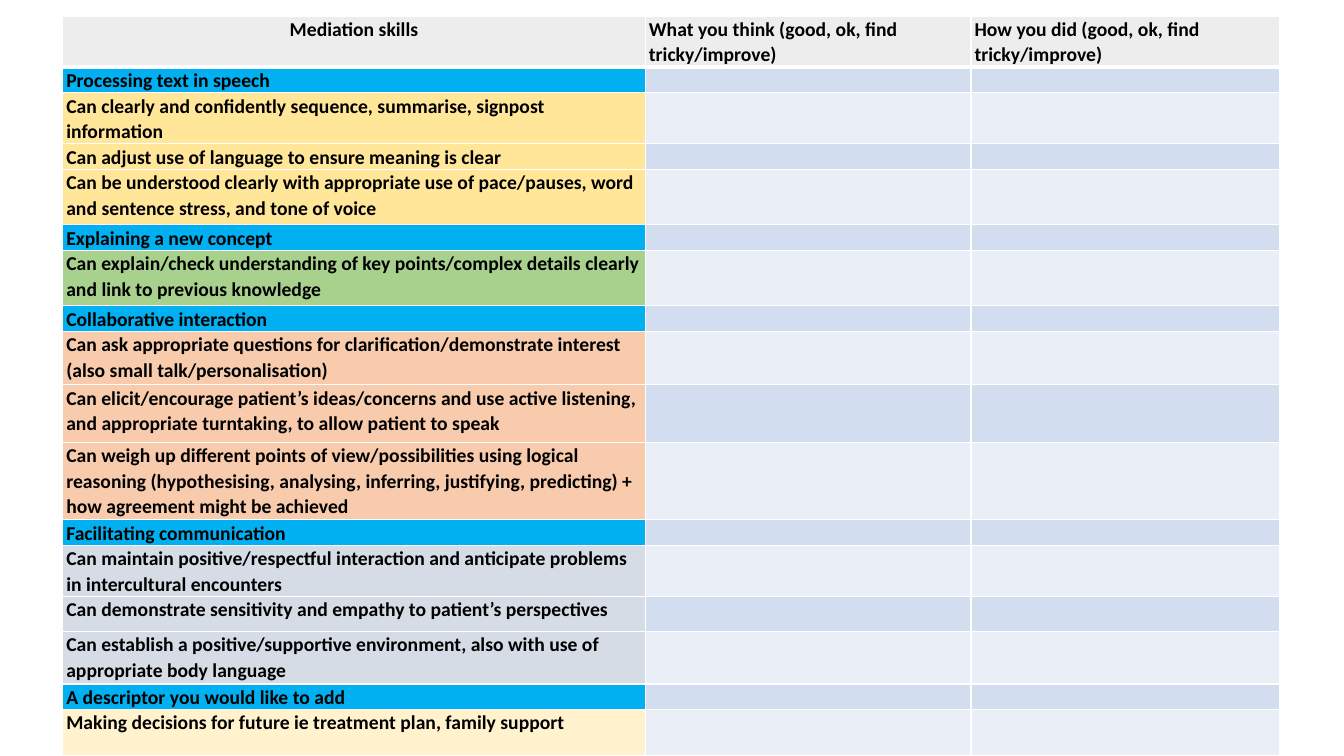
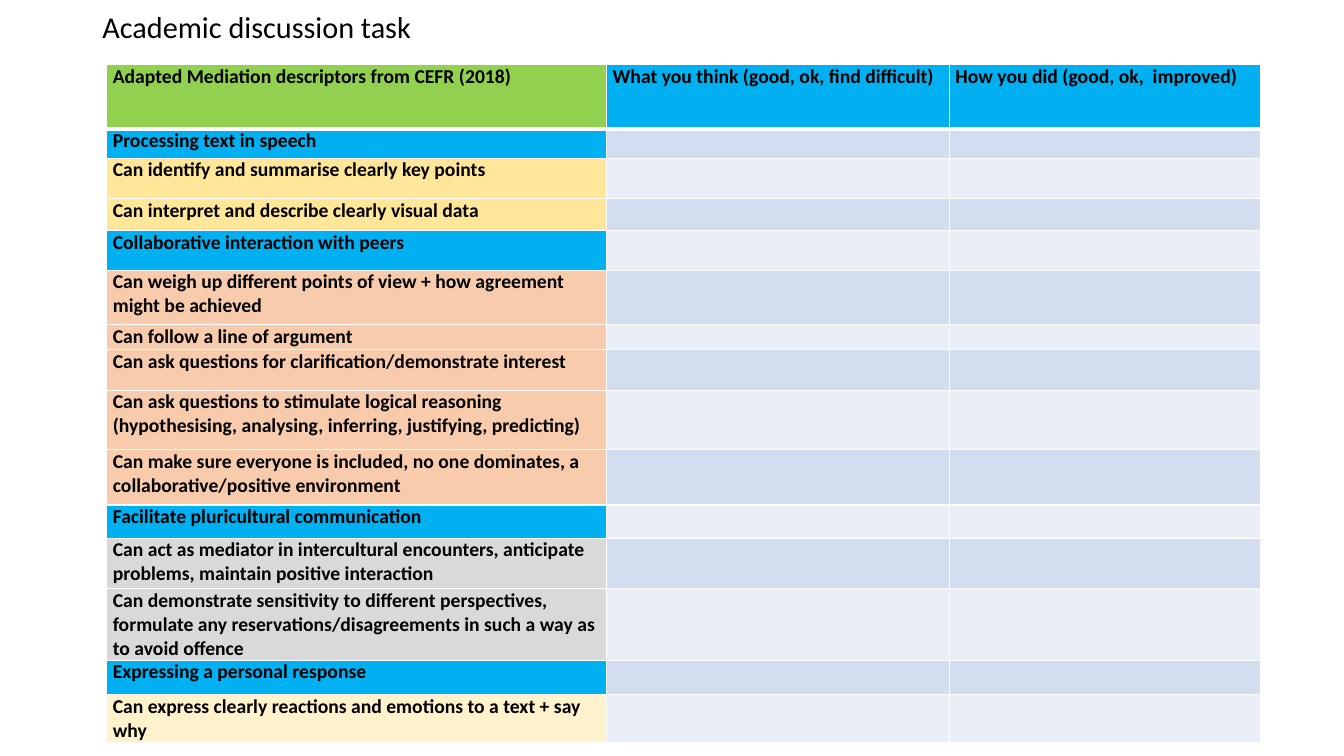
from lxml import etree
from pptx import Presentation
from pptx.dml.color import RGBColor
from pptx.enum.text import MSO_ANCHOR, MSO_AUTO_SIZE, PP_ALIGN
from pptx.oxml.ns import qn
from pptx.util import Pt

MIDDLE = MSO_ANCHOR.MIDDLE
NO_AUTOFIT = MSO_AUTO_SIZE.NONE
LEFT = PP_ALIGN.LEFT
CENTER = PP_ALIGN.CENTER

TITLE_ONLY_LAYOUT = 5
BLANK_LAYOUT = 6
FONT = "Calibri"
TABLE_TEXT_SIZE = 14
TITLE_SIZE = 21.6

BLACK = "000000"
WHITE = "FFFFFF"
HEADING = "00B0F0"
YELLOW = "FFE699"
CREAM = "FFF2CC"
GREEN = "A9D18E"
LIME = "92D050"
PEACH = "F8CBAD"
BLUE_GREY = "D6DCE5"
GREY = "D9D9D9"
PALE_GREY = "EDEDED"
BANDS = ("EAEFF7", "D2DEEF")

SKILLS_HEADER = [
    ("Mediation skills", PALE_GREY),
    ("What you think (good, ok, find tricky/improve)", PALE_GREY),
    ("How you did (good, ok, find tricky/improve)", PALE_GREY),
]
SKILLS_ROWS = [
    ("Processing text in speech", HEADING, 17.3),
    ("Can clearly and confidently sequence, summarise, signpost information", YELLOW, 34.6),
    ("Can adjust use of language to ensure meaning is clear", YELLOW, 17.3),
    ("Can be understood clearly with appropriate use of pace/pauses, word and sentence stress, "
     "and tone of voice", YELLOW, 39.6),
    ("Explaining a new concept", HEADING, 17.3),
    ("Can explain/check understanding of key points/complex details clearly and link to "
     "previous knowledge", GREEN, 39.6),
    ("Collaborative interaction", HEADING, 17.3),
    ("Can ask appropriate questions for clarification/demonstrate interest (also small "
     "talk/personalisation)", PEACH, 38.2),
    ("Can elicit/encourage patient’s ideas/concerns and use active listening, and appropriate "
     "turntaking, to allow patient to speak", PEACH, 41),
    ("Can weigh up different points of view/possibilities using logical reasoning "
     "(hypothesising, analysing, inferring, justifying, predicting) + how agreement might be "
     "achieved", PEACH, 55.4),
    ("Facilitating communication", HEADING, 17.3),
    ("Can maintain positive/respectful interaction and anticipate problems in intercultural "
     "encounters", BLUE_GREY, 34.6),
    ("Can demonstrate sensitivity and empathy to patient’s perspectives", BLUE_GREY, 25.2),
    ("Can establish a positive/supportive environment, also with use of appropriate body "
     "language", BLUE_GREY, 37.4),
    ("A descriptor you would like to add", HEADING, 17.3),
    ("Making decisions for future ie treatment plan, family support", CREAM, 33),
]

DISCUSSION_HEADER = [
    ("Adapted Mediation descriptors from CEFR (2018)", LIME),
    ("What you think (good, ok, find difficult)", HEADING),
    ("How you did (good, ok,  improved)", HEADING),
]
DISCUSSION_ROWS = [
    ("Processing text in speech", HEADING, 20.9),
    ("Can identify and summarise clearly key points", YELLOW, 28.8),
    ("Can interpret and describe clearly visual data", YELLOW, 23),
    ("Collaborative interaction with peers", HEADING, 28.1),
    ("Can weigh up different points of view + how agreement might be achieved", PEACH, 38.9),
    ("Can follow a line of argument", PEACH, 18),
    ("Can ask questions for clarification/demonstrate interest", PEACH, 28.8),
    ("Can ask questions to stimulate logical reasoning (hypothesising, analysing, inferring, "
     "justifying, predicting)", PEACH, 42.5),
    ("Can make sure everyone is included, no one dominates, a collaborative/positive "
     "environment", PEACH, 39.6),
    ("Facilitate pluricultural communication", HEADING, 23.8),
    ("Can act as mediator in intercultural encounters, anticipate problems, maintain positive "
     "interaction", GREY, 36),
    ("Can demonstrate sensitivity to different perspectives, formulate any "
     "reservations/disagreements in such a way as to avoid offence", GREY, 50.4),
    ("Expressing a personal response", HEADING, 24.5),
    ("Can express clearly reactions and emotions to a text + say why", CREAM, 33.8),
]


def color(value):
    return RGBColor.from_string(value)


def format_runs(paragraph, size, bold):
    for run in paragraph.runs:
        run.font.name = FONT
        run.font.size = Pt(size)
        run.font.bold = bold
        run.font.color.rgb = color(BLACK)


def add_borders(cell, bottom_width):
    properties = cell._tc.get_or_add_tcPr()
    for side, width in (("L", 1), ("R", 1), ("T", 1), ("B", bottom_width)):
        line = etree.SubElement(properties, qn("a:ln" + side), w=str(Pt(width)))
        fill = etree.SubElement(line, qn("a:solidFill"))
        etree.SubElement(fill, qn("a:srgbClr"), val=WHITE)


def format_cell(cell, text, fill, inset, line_spacing, bottom_width=1):
    add_borders(cell, bottom_width)
    cell.fill.solid()
    cell.fill.fore_color.rgb = color(fill)
    cell.margin_left = cell.margin_right = Pt(inset)
    cell.margin_top = cell.margin_bottom = Pt(0)
    if text:
        cell.text_frame.text = text
        paragraph = cell.text_frame.paragraphs[0]
        paragraph.line_spacing = line_spacing
        format_runs(paragraph, TABLE_TEXT_SIZE, True)
    else:
        paragraph = cell.text_frame.paragraphs[0]
        etree.SubElement(paragraph._p, qn("a:endParaRPr"), sz=str(TABLE_TEXT_SIZE * 100))


def add_checklist(slide, left, top, widths, header, header_height, rows, inset, line_spacing):
    heights = [header_height] + [height for _, _, height in rows]
    frame = slide.shapes.add_table(len(heights), len(widths), Pt(left), Pt(top),
                                   Pt(sum(widths)), Pt(sum(heights)))
    table = frame.table
    for column, width in zip(table.columns, widths):
        column.width = Pt(width)
    for row, height in zip(table.rows, heights):
        row.height = Pt(height)
    for index, (text, fill) in enumerate(header):
        format_cell(table.cell(0, index), text, fill, inset, line_spacing, bottom_width=3)
    for number, (text, fill, _) in enumerate(rows, start=1):
        format_cell(table.cell(number, 0), text, fill, inset, line_spacing)
        for index in range(1, len(widths)):
            format_cell(table.cell(number, index), "", BANDS[number % 2], inset, line_spacing)
    return table


def set_title(slide, text, left, top, width, height):
    title = slide.shapes.title
    title.left, title.top, title.width, title.height = Pt(left), Pt(top), Pt(width), Pt(height)
    text_frame = title.text_frame
    text_frame.text = text
    text_frame.auto_size = NO_AUTOFIT
    text_frame.word_wrap = True
    text_frame.vertical_anchor = MIDDLE
    paragraph = text_frame.paragraphs[0]
    paragraph.alignment = LEFT
    paragraph.line_spacing = 0.9
    format_runs(paragraph, TITLE_SIZE, False)


def build_skills_slide(presentation):
    slide = presentation.slides.add_slide(presentation.slide_layouts[BLANK_LAYOUT])
    table = add_checklist(slide, 44.8, 11.5, (416.2, 232.6, 220.3), SKILLS_HEADER, 34.6,
                          SKILLS_ROWS, inset=2.6, line_spacing=1.07)
    table.cell(0, 0).text_frame.paragraphs[0].alignment = CENTER


def build_discussion_slide(presentation):
    slide = presentation.slides.add_slide(presentation.slide_layouts[TITLE_ONLY_LAYOUT])
    set_title(slide, "Academic discussion task", 66, 8, 828, 25)
    add_checklist(slide, 76.3, 46.1, (357.1, 244.8, 222.5), DISCUSSION_HEADER, 46.1,
                  DISCUSSION_ROWS, inset=4.3, line_spacing=1.0)


def main():
    presentation = Presentation()
    presentation.slide_width = Pt(960)
    presentation.slide_height = Pt(540)
    build_skills_slide(presentation)
    build_discussion_slide(presentation)
    presentation.save("out.pptx")


if __name__ == "__main__":
    main()
